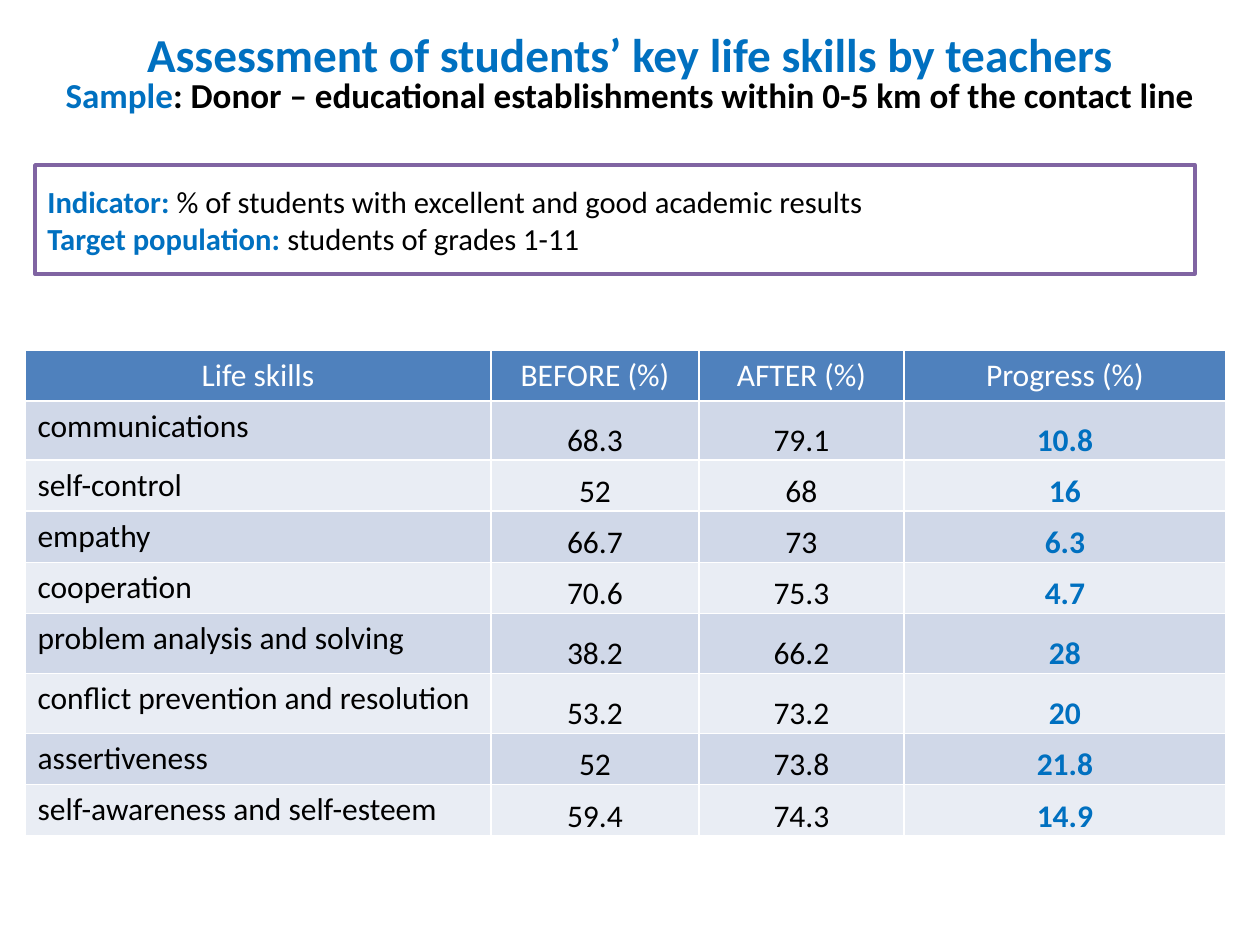
from dataclasses import dataclass
from typing import NamedTuple

from lxml import etree
from pptx import Presentation
from pptx import util as u
from pptx.dml import color
from pptx.enum import shapes, text
from pptx.oxml import ns

PX_PER_INCH = 126
ALIGN, ANCHOR = text.PP_ALIGN, text.MSO_ANCHOR


@dataclass(frozen=True)
class Theme:
    font: str = "Calibri"
    accent: str = "0070C0"
    ink: str = "000000"
    white: str = "FFFFFF"
    frame: str = "8064A2"
    header: str = "4F81BD"
    bands: tuple = ("D0D8E8", "E9EDF4")
    title: float = 27
    subtitle: float = 20
    note: float = 17.5
    table: float = 18


class Span(NamedTuple):
    text: str
    size: float
    color: str
    bold: bool = False
    breaks: bool = False


class Skill(NamedTuple):
    name: str
    before: str
    after: str
    progress: str
    height: int = 49


THEME = Theme()
HEADINGS = ("Life skills", "BEFORE (%)", "AFTER (%)", "Progress (%)")
HEADER_HEIGHT = 49
COLUMN_WIDTHS = (466, 208, 205, 322)
SKILLS = (
    Skill("communications", "68.3", "79.1", "10.8", 59),
    Skill("self-control", "52", "68", "16"),
    Skill("empathy", "66.7", "73", "6.3"),
    Skill("cooperation", "70.6", "75.3", "4.7"),
    Skill("problem analysis and solving", "38.2", "66.2", "28", 60),
    Skill("conflict prevention and resolution", "53.2", "73.2", "20", 60),
    Skill("assertiveness", "52", "73.8", "21.8"),
    Skill("self-awareness and self-esteem", "59.4", "74.3", "14.9"),
)


def px(length: int) -> int:
    return round(length * u.Inches(1) / PX_PER_INCH)


def rgb(value: str) -> color.RGBColor:
    return color.RGBColor.from_string(value)


def write(frame, *spans: Span, align=ALIGN.LEFT, spacing=None) -> None:
    """Fill the first paragraph of a text frame with formatted spans."""
    para = frame.paragraphs[0]
    para.alignment = align
    if spacing:
        para.line_spacing = spacing
    for span in spans:
        run = para.add_run()
        run.text = span.text
        run.font.name = THEME.font
        run.font.size = u.Pt(span.size)
        run.font.bold = span.bold
        run.font.color.rgb = rgb(span.color)
        if span.breaks:
            para.add_line_break()


def set_borders(cell) -> None:
    """Draw white borders; the line elements must precede the cell fill."""
    properties = cell._tc.get_or_add_tcPr()
    for position, side in enumerate(("lnL", "lnR", "lnT", "lnB")):
        line = etree.Element(ns.qn(f"a:{side}"), w=str(u.Pt(1)))
        fill = etree.SubElement(line, ns.qn("a:solidFill"))
        etree.SubElement(fill, ns.qn("a:srgbClr"), val=THEME.white)
        properties.insert(position, line)


def fill_cell(cell, span: Span, fill: str, align=ALIGN.CENTER) -> None:
    cell.fill.solid()
    cell.fill.fore_color.rgb = rgb(fill)
    set_borders(cell)
    write(cell.text_frame, span, align=align)


def add_title(page) -> None:
    box = page.shapes.add_textbox(px(14), px(36), px(1232), px(79))
    box.text_frame.word_wrap = True
    box.text_frame.vertical_anchor = ANCHOR.MIDDLE
    write(
        box.text_frame,
        Span("Assessment of students’ key life skills by teachers",
             THEME.title, THEME.accent, True, breaks=True),
        Span("Sample", THEME.subtitle, THEME.accent, True),
        Span(": Donor – educational establishments within 0-5 km of the contact line",
             THEME.subtitle, THEME.ink, True),
        align=ALIGN.CENTER, spacing=0.8,
    )


def add_indicator(page) -> None:
    box = page.shapes.add_shape(
        shapes.MSO_SHAPE.RECTANGLE, px(35), px(165), px(1160), px(109))
    box.shadow.inherit = False
    box.fill.solid()
    box.fill.fore_color.rgb = rgb(THEME.white)
    box.line.color.rgb = rgb(THEME.frame)
    box.line.width = u.Pt(2)
    box.text_frame.word_wrap = True
    box.text_frame.vertical_anchor = ANCHOR.MIDDLE
    write(
        box.text_frame,
        Span("Indicator: ", THEME.note, THEME.accent, True),
        Span("% of students with excellent and good academic results",
             THEME.note, THEME.ink, breaks=True),
        Span("Target population: ", THEME.note, THEME.accent, True),
        Span("students of grades 1-11", THEME.note, THEME.ink),
    )


def add_skills_table(page) -> None:
    heights = (HEADER_HEIGHT, *(skill.height for skill in SKILLS))
    table = page.shapes.add_table(
        len(heights), len(COLUMN_WIDTHS), px(25), px(350),
        px(sum(COLUMN_WIDTHS)), px(sum(heights))).table
    for column, width in zip(table.columns, COLUMN_WIDTHS):
        column.width = px(width)
    for row, height in zip(table.rows, heights):
        row.height = px(height)

    # Header row
    for index, heading in enumerate(HEADINGS):
        fill_cell(table.cell(0, index), Span(heading, THEME.table, THEME.white),
                  THEME.header)

    # Skill rows: name on the left, figures at the foot of the cell
    for number, skill in enumerate(SKILLS):
        band = THEME.bands[number % 2]
        fill_cell(table.cell(number + 1, 0),
                  Span(skill.name, THEME.table, THEME.ink), band, align=ALIGN.LEFT)
        figures = (
            Span(skill.before, THEME.table, THEME.ink),
            Span(skill.after, THEME.table, THEME.ink),
            Span(skill.progress, THEME.table, THEME.accent, True),
        )
        for index, figure in enumerate(figures, start=1):
            cell = table.cell(number + 1, index)
            cell.vertical_anchor = ANCHOR.BOTTOM
            cell.margin_left = cell.margin_right = cell.margin_top = px(1)
            cell.margin_bottom = 0
            fill_cell(cell, figure, band)


def main() -> None:
    deck = Presentation()
    deck.slide_width, deck.slide_height = px(1260), px(945)
    page = deck.slides.add_slide(deck.slide_layouts[6])
    add_indicator(page)
    add_skills_table(page)
    add_title(page)
    deck.save("out.pptx")


if __name__ == "__main__":
    main()
